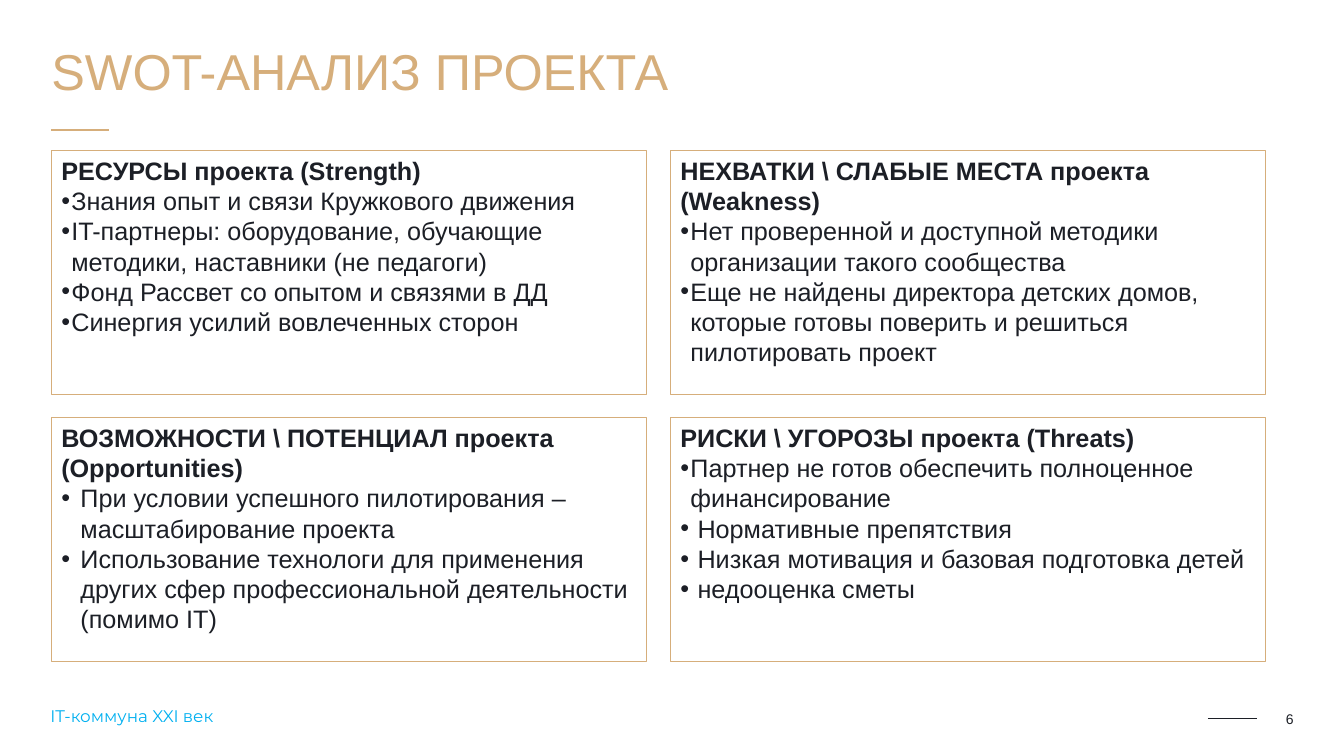
from pptx import Presentation, util as u
from pptx.dml.color import RGBColor
from pptx.enum import shapes, text
from pptx.oxml.ns import qn
from lxml import etree

# Content: heading, then (indent, bullet text)
TITLE = "SWOT-АНАЛИЗ ПРОЕКТА"
FOOTER = "IT-коммуна XXI век"
PAGE = "6"
QUADRANTS = [
    ("РЕСУРСЫ проекта (Strength)", [
        (0.1, "Знания опыт и связи Кружкового движения"),
        (0.1, "IT-партнеры: оборудование, обучающие методики, наставники (не педагоги)"),
        (0.1, "Фонд Рассвет со опытом и связями в ДД"),
        (0.1, "Синергия усилий вовлеченных сторон")]),
    ("НЕХВАТКИ \\ СЛАБЫЕ МЕСТА проекта (Weakness)", [
        (0.1, "Нет проверенной и доступной методики организации такого сообщества"),
        (0.1, "Еще не найдены директора детских домов, которые готовы поверить "
              "и решиться пилотировать проект")]),
    ("ВОЗМОЖНОСТИ \\ ПОТЕНЦИАЛ проекта (Opportunities)", [
        (0.19, "При условии успешного пилотирования – масштабирование проекта"),
        (0.19, "Использование технологи для применения других сфер "
               "профессиональной деятельности (помимо IT)")]),
    ("РИСКИ \\ УГОРОЗЫ проекта (Threats)", [
        (0.1, "Партнер не готов обеспечить полноценное финансирование"),
        (0.17, "Нормативные препятствия"),
        (0.17, "Низкая мотивация и базовая подготовка детей"),
        (0.17, "недооценка сметы")]),
]
COLORS = {"gold": "D6AE7B", "dark": "1C1F26", "blue": "00B0F0"}
LEFT, TOP, CARD_W, CARD_H, GAP_X, GAP_Y = 0.51, 1.49, 5.9, 2.42, 0.24, 0.23


def color(name):
    return RGBColor.from_string(COLORS[name])


def write(p, content, size=18, font="Arial", fill="dark", bold=False,
          align=text.PP_ALIGN.LEFT, spacing=None, indent=None):
    if indent:
        pPr = p._p.get_or_add_pPr()
        pPr.set("marL", str(u.Inches(indent)))
        pPr.set("indent", str(-u.Inches(indent)))
        etree.SubElement(pPr, qn("a:buFont")).set("typeface", "Arial")
        etree.SubElement(pPr, qn("a:buChar")).set("char", "•")
    p.alignment = align
    if spacing:
        p.line_spacing = spacing
    r = p.add_run()
    r.text = content
    r.font.size, r.font.name, r.font.bold = u.Pt(size), font, bold
    r.font.color.rgb = color(fill)


def add_text(s, x, y, w, h, content, inset=None, wrap=True,
             anchor=text.MSO_ANCHOR.TOP, **fmt):
    tf = s.shapes.add_textbox(*map(u.Inches, (x, y, w, h))).text_frame
    tf.word_wrap, tf.vertical_anchor = wrap, anchor
    if inset is not None:
        tf.margin_left = tf.margin_right = u.Inches(inset)
        tf.margin_top = tf.margin_bottom = u.Inches(inset)
    write(tf.paragraphs[0], content, **fmt)


def add_rule(s, x1, x2, y, name, width):
    ln = s.shapes.add_connector(shapes.MSO_CONNECTOR.STRAIGHT,
                                *map(u.Inches, (x1, y, x2, y)))
    ln.line.color.rgb, ln.line.width = color(name), u.Pt(width)
    etree.SubElement(ln._element.spPr, qn("a:effectLst"))


def add_card(s, x, y, heading, bullets):
    sp = s.shapes.add_shape(shapes.MSO_SHAPE.RECTANGLE,
                            *map(u.Inches, (x, y, CARD_W, CARD_H)))
    sp.shadow.inherit = False
    sp.fill.background()
    sp.line.color.rgb, sp.line.width = color("gold"), u.Pt(0.75)
    tf = sp.text_frame
    tf.word_wrap, tf.vertical_anchor = True, text.MSO_ANCHOR.TOP
    write(tf.paragraphs[0], heading, bold=True)
    for indent, item in bullets:
        write(tf.add_paragraph(), item, indent=indent)


prs = Presentation()
prs.slide_width, prs.slide_height = u.Inches(13.33), u.Inches(7.5)
s = prs.slides.add_slide(prs.slide_layouts[6])

# Footer and page number
add_text(s, 12.65, 7.05, 0.18, 0.17, PAGE, inset=0, wrap=False,
         anchor=text.MSO_ANCHOR.MIDDLE, size=10, align=text.PP_ALIGN.RIGHT)
add_rule(s, 11.98, 12.47, 7.13, "dark", 1)
add_text(s, 0.4, 6.97, 2.09, 0.33, FOOTER, size=12, font="Montserrat",
         fill="blue", spacing=0.9)

# Title
add_text(s, LEFT, 0.1, 12.31, 0.8, TITLE, inset=0, size=36, fill="gold", spacing=1.5)
add_rule(s, LEFT, 1.08, 1.29, "gold", 1.5)

# SWOT grid, two by two
for i, (heading, bullets) in enumerate(QUADRANTS):
    row, col = divmod(i, 2)
    add_card(s, LEFT + col * (CARD_W + GAP_X), TOP + row * (CARD_H + GAP_Y),
             heading, bullets)

prs.save("out.pptx")
